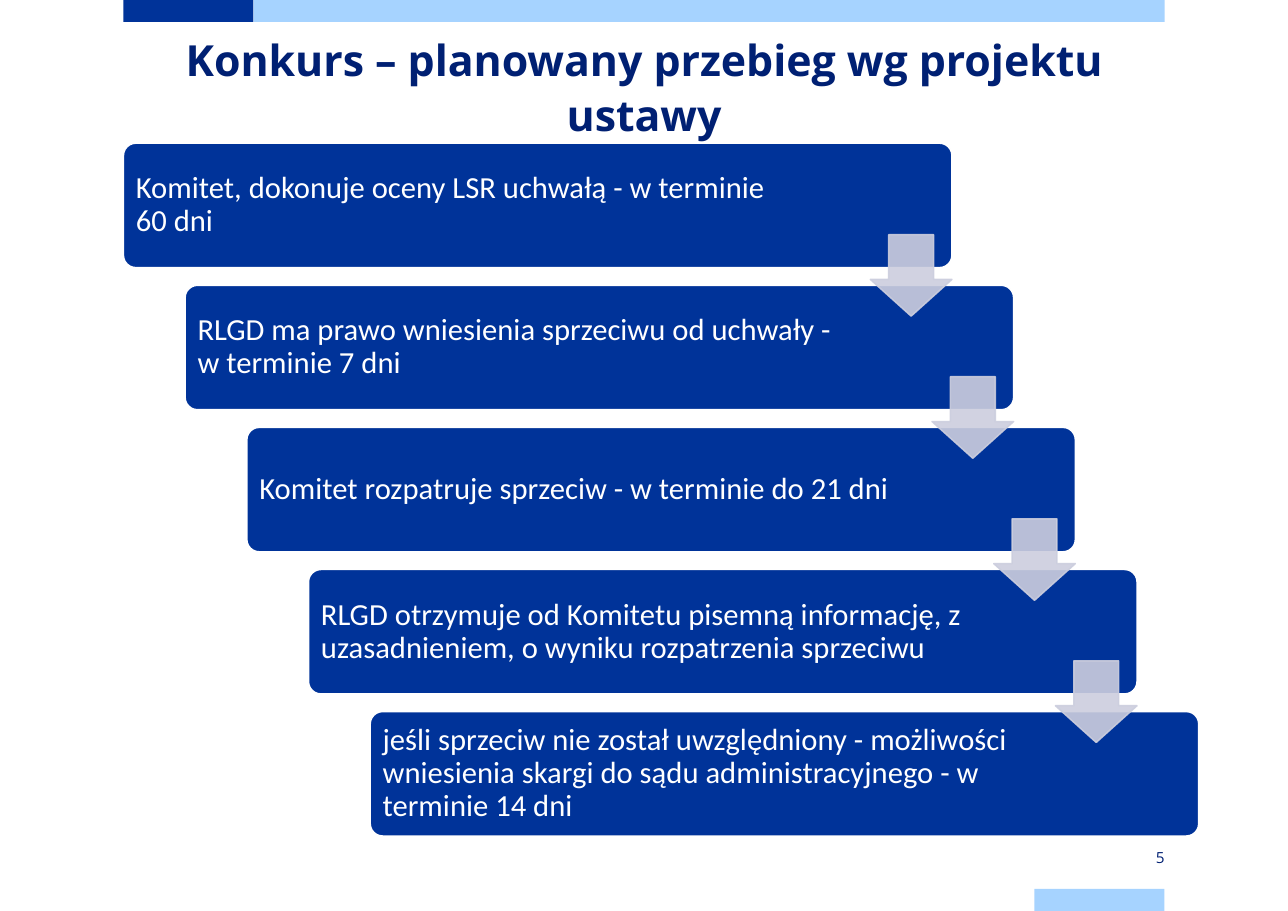
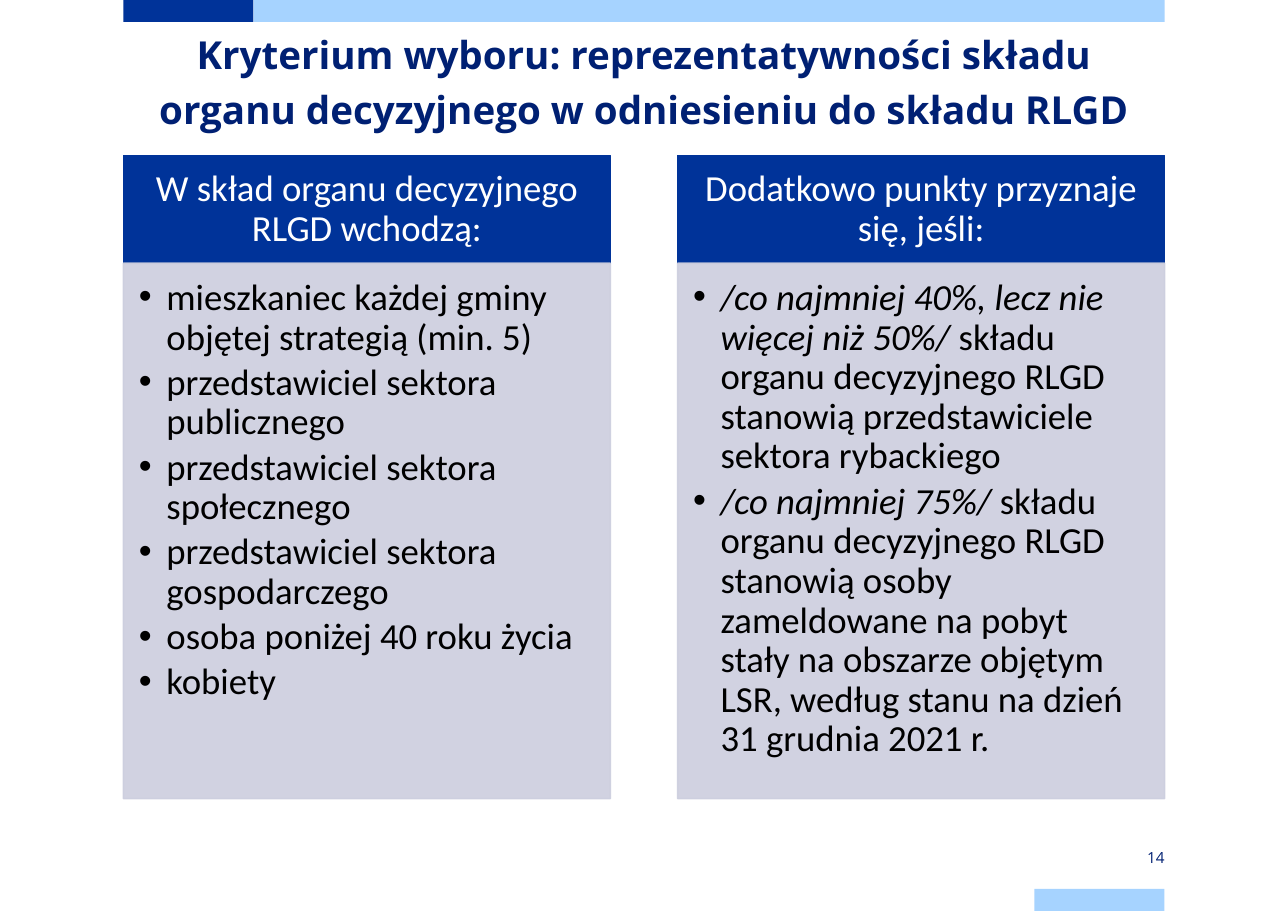
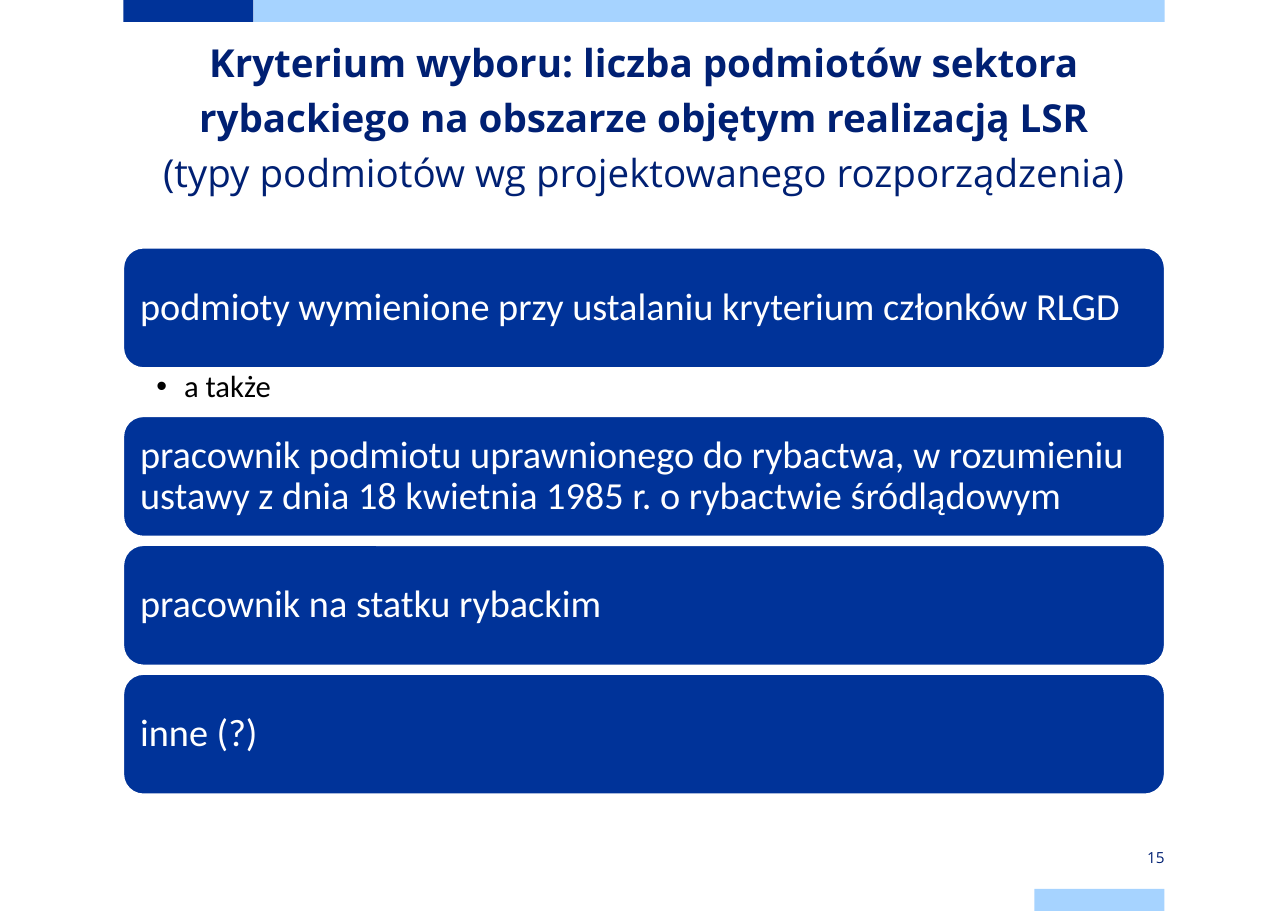
from lxml import etree
from pptx import Presentation
from pptx.dml.color import RGBColor
from pptx.enum.shapes import MSO_SHAPE
from pptx.enum.text import MSO_ANCHOR, PP_ALIGN
from pptx.oxml.ns import qn
from pptx.util import Inches, Pt

RECT, ROUND = MSO_SHAPE.RECTANGLE, MSO_SHAPE.ROUNDED_RECTANGLE
ARROW = MSO_SHAPE.DOWN_ARROW
LEFT, CENTER, RIGHT = PP_ALIGN.LEFT, PP_ALIGN.CENTER, PP_ALIGN.RIGHT
TOP, MIDDLE = MSO_ANCHOR.TOP, MSO_ANCHOR.MIDDLE

COLORS = {"blue": "003399", "sky": "A6D3FF", "navy": "002073",
          "lilac": "CCCEDE", "white": "FFFFFF", "black": "000000"}
HEAD_FONT, BODY_FONT = "Open Sans", "Calibri"

# Grid in inches: eight columns between equal margins
WIDTH, HEIGHT = 11.69, 8.27
MARGIN, CONTENT = 1.12, 9.45
COLUMN = CONTENT / 8
LAST_COLUMN = MARGIN + 7 * COLUMN
BAND = 0.2


def add_block(page, preset, place, fill=None, line=None, alpha=None, adjust=()):
    """Add a preset shape, or a plain text box when preset is None."""
    place = [Inches(value) for value in place]
    if preset is None:
        return page.shapes.add_textbox(*place)
    box = page.shapes.add_shape(preset, *place)
    box.shadow.inherit = False
    for index, value in enumerate(adjust):
        box.adjustments[index] = value
    box.fill.solid()
    box.fill.fore_color.rgb = RGBColor.from_string(COLORS[fill])
    if line:
        box.line.color.rgb = RGBColor.from_string(COLORS[line])
        box.line.width = Pt(1)
    else:
        box.line.fill.background()
    if alpha:
        for color in box._element.spPr.iter(qn("a:srgbClr")):
            etree.SubElement(color, qn("a:alpha"), val=str(alpha * 1000))
    return box


def write(box, paras, size, color, insets, font=BODY_FONT, align=LEFT,
          anchor=MIDDLE, spacing=0.9, bullet=False):
    """Fill a box; each paragraph is a list of (text, style) runs."""
    frame = box.text_frame
    frame.word_wrap = True
    frame.vertical_anchor = anchor
    (frame.margin_left, frame.margin_top,
     frame.margin_right, frame.margin_bottom) = [Inches(v) for v in insets]
    for index, runs in enumerate(paras):
        para = frame.paragraphs[0] if index == 0 else frame.add_paragraph()
        if bullet:
            props = para._p.get_or_add_pPr()
            props.set("marL", str(Inches(0.25)))
            props.set("indent", str(-Inches(0.25)))
            etree.SubElement(props, qn("a:buFont"), typeface="Arial")
            etree.SubElement(props, qn("a:buChar"), char="•")
            para.space_after = Pt(0.15 * size)
        para.alignment = align
        para.line_spacing = spacing
        for text, style in runs:
            span = para.add_run()
            span.text = text
            span.font.name = font
            span.font.size = Pt(size)
            span.font.bold = style == "bold"
            span.font.italic = style == "italic"
            span.font.color.rgb = RGBColor.from_string(COLORS[color])


deck = Presentation()
deck.slide_width, deck.slide_height = Inches(WIDTH), Inches(HEIGHT)

# Shared frame: bands, title and page number
FRAMES = [
    (5, 28, 0.27, [[("Konkurs – planowany przebieg wg projektu ustawy", "bold")]]),
    (14, 25.2, 0.2, [[("Kryterium wyboru: reprezentatywności składu organu "
                       "decyzyjnego w odniesieniu do składu RLGD", "bold")]]),
    (15, 25.2, 0.27, [[("Kryterium wyboru: liczba podmiotów sektora rybackiego "
                        "na obszarze objętym realizacją LSR", "bold")],
                      [("(typy podmiotów wg projektowanego rozporządzenia)", "")]]),
]
pages = []
for number, size, top, title in FRAMES:
    page = deck.slides.add_slide(deck.slide_layouts[6])
    pages.append(page)
    for left, band_top, columns, fill in [(MARGIN, 0, 1, "blue"),
                                          (MARGIN + COLUMN, 0, 7, "sky"),
                                          (LAST_COLUMN, HEIGHT - BAND, 1, "sky")]:
        add_block(page, RECT, (left, band_top, columns * COLUMN, BAND), fill)
    box = add_block(page, None, (MARGIN, top, CONTENT, 0.6 * len(title) + 0.58))
    write(box, title, size, "navy", (0, 0, 0, 0), HEAD_FONT, CENTER, TOP, Pt(36))
    box = add_block(page, None, (LAST_COLUMN, 7.68, COLUMN, BAND))
    write(box, [[(str(number), "")]], 10, "navy", (0, 0.08, 0, 0.08),
          HEAD_FONT, RIGHT, spacing=1.0)

contest, criteria, entities = pages

# Contest: descending steps, then the arrows between them
STEPS = [
    "Komitet, dokonuje oceny LSR uchwałą - w terminie 60 dni",
    "RLGD ma prawo wniesienia sprzeciwu od uchwały - w terminie 7 dni",
    "Komitet rozpatruje sprzeciw - w terminie do 21 dni",
    "RLGD otrzymuje od Komitetu pisemną informację, z uzasadnieniem, "
    "o wyniku rozpatrzenia sprzeciwu",
    "jeśli sprzeciw nie został uwzględniony - możliwości wniesienia skargi "
    "do sądu administracyjnego - w terminie 14 dni",
]
STEP_WIDTH, STEP_HEIGHT, ARROW_SIZE = 7.52, 1.13, 0.74
corners = [(MARGIN + 0.56 * row, 1.3 + 1.29 * row) for row in range(len(STEPS))]
for (left, top), text in zip(corners, STEPS):
    box = add_block(contest, ROUND, (left, top, STEP_WIDTH, STEP_HEIGHT),
                    "blue", "white", adjust=[0.1])
    write(box, [[(text, "")]], 20, "white", (0.08, 0.08, 1.37, 0.08))
for left, top in corners[:-1]:
    place = (left + STEP_WIDTH - ARROW_SIZE, top + 0.83, ARROW_SIZE, ARROW_SIZE)
    # Adjustments of the arrow: head length, shaft width
    box = add_block(contest, ARROW, place, "lilac", "lilac", 90, [0.55, 0.45])

# Criteria: two headed panels
PANELS = [
    ("W skład organu decyzyjnego RLGD wchodzą:", [
        [("mieszkaniec każdej gminy objętej strategią (min. 5)", "")],
        [("przedstawiciel sektora publicznego", "")],
        [("przedstawiciel sektora społecznego", "")],
        [("przedstawiciel sektora gospodarczego", "")],
        [("osoba poniżej 40 roku życia", "")],
        [("kobiety", "")],
    ]),
    ("Dodatkowo punkty przyznaje się, jeśli:", [
        [("/co najmniej 40%, lecz nie więcej niż 50%/ ", "italic"),
         ("składu organu decyzyjnego RLGD stanowią przedstawiciele "
          "sektora rybackiego", "")],
        [("/co najmniej 75%/ ", "italic"),
         ("składu organu decyzyjnego RLGD stanowią osoby zameldowane na pobyt "
          "stały na obszarze objętym LSR, według stanu na dzień "
          "31 grudnia 2021 r.", "")],
    ]),
]
PANEL_WIDTH, PANEL_TOP, HEADER_HEIGHT = 4.42, 1.41, 0.98
for index, (header, items) in enumerate(PANELS):
    left = MARGIN + index * (CONTENT - PANEL_WIDTH)
    box = add_block(criteria, RECT, (left, PANEL_TOP, PANEL_WIDTH, HEADER_HEIGHT),
                    "blue", "blue")
    write(box, [[(header, "")]], 24, "white", (0.19, 0.11, 0.19, 0.11), align=CENTER)
    box = add_block(criteria, RECT,
                    (left, PANEL_TOP + HEADER_HEIGHT, PANEL_WIDTH, 4.86),
                    "lilac", "lilac", 90)
    write(box, items, 24, "black", (0.14, 0.14, 0.19, 0.21), anchor=TOP, bullet=True)

# Entities: stacked bars with a note under the first
BARS = [
    (2.25, "podmioty wymienione przy ustalaniu kryterium członków RLGD"),
    (3.78, "pracownik podmiotu uprawnionego do rybactwa, w rozumieniu ustawy "
           "z dnia 18 kwietnia 1985 r. o rybactwie śródlądowym"),
    (4.95, "pracownik na statku rybackim"),
    (6.12, "inne (?)"),
]
BAR_HEIGHT = 1.09
for top, text in BARS:
    box = add_block(entities, ROUND, (MARGIN, top, CONTENT, BAR_HEIGHT), "blue", "white")
    write(box, [[(text, "")]], 25, "white", (0.1, 0.1, 0.1, 0.1))
box = add_block(entities, None, (MARGIN, BARS[0][0] + BAR_HEIGHT, CONTENT, 0.45))
write(box, [[("a także", "")]], 20, "black", (0.3, 0.03, 0.19, 0.03),
      anchor=TOP, bullet=True)

deck.save("out.pptx")
